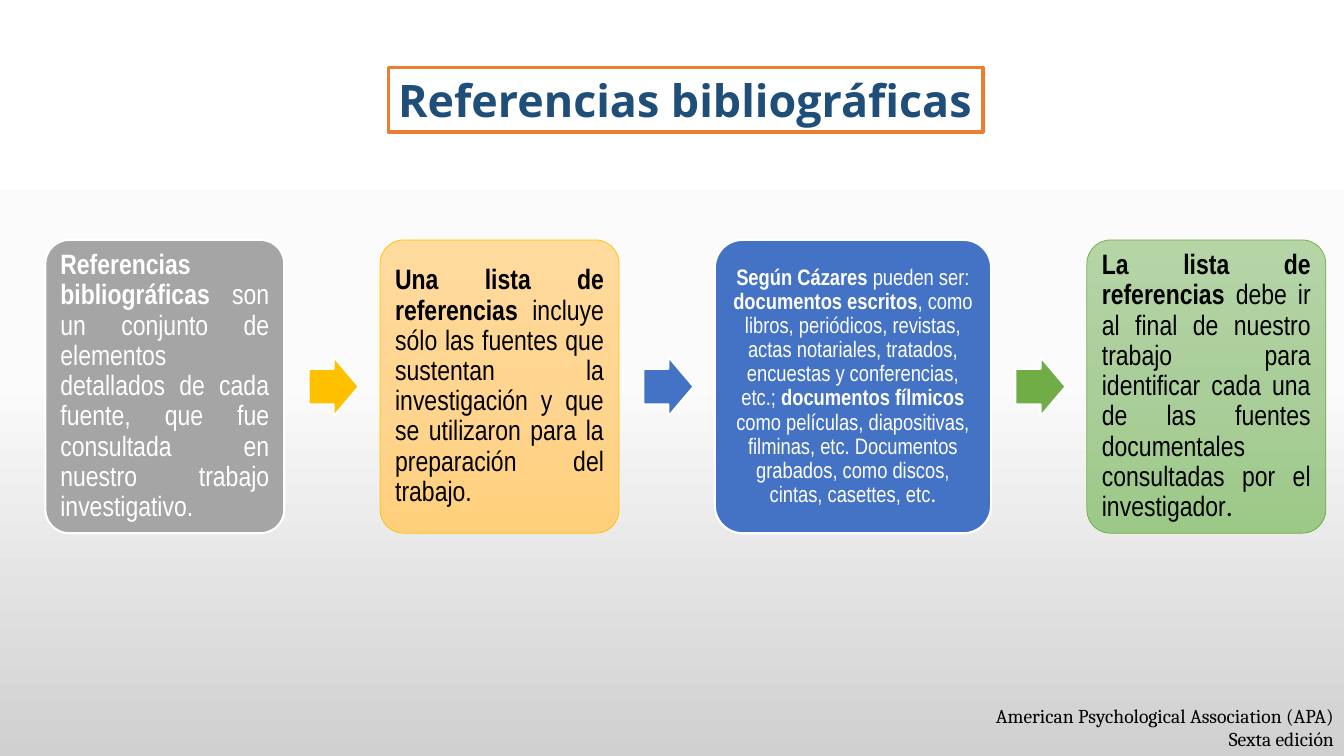
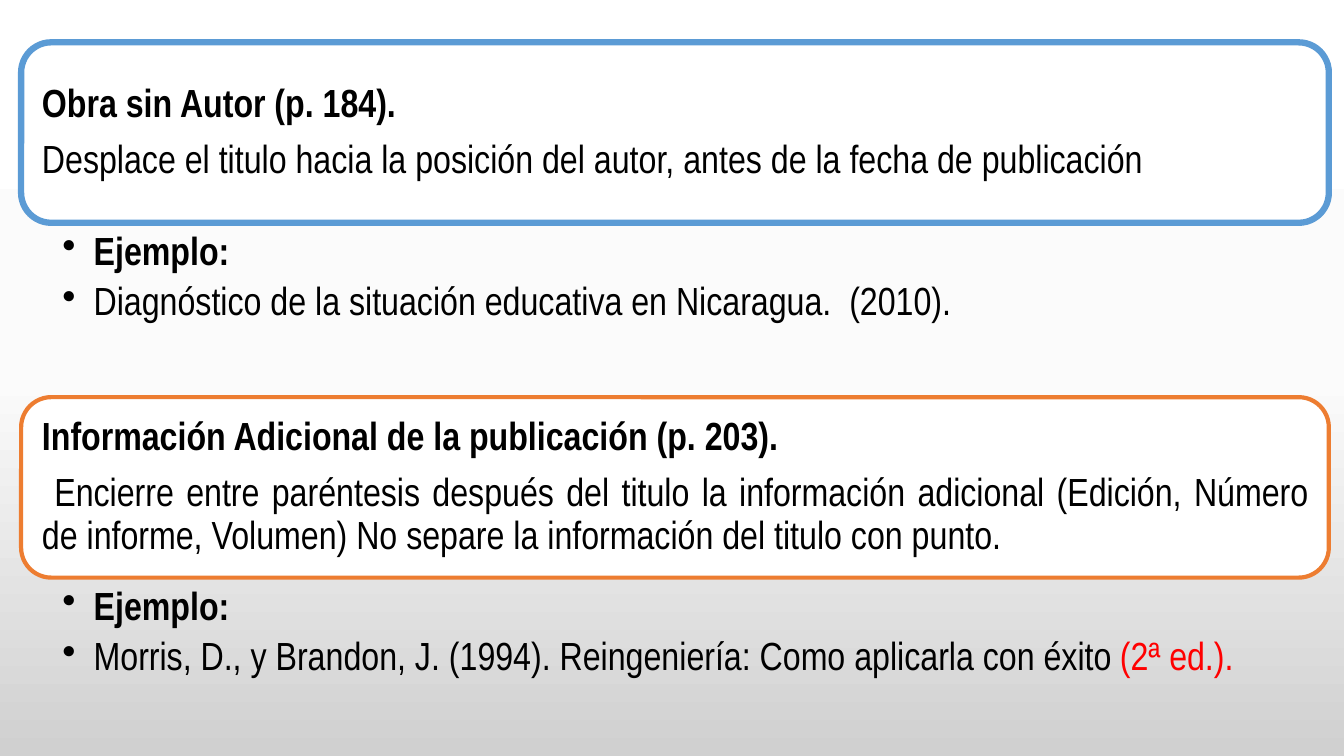
from copy import deepcopy

from pptx import Presentation
from pptx.dml.color import RGBColor
from pptx.enum.shapes import MSO_SHAPE
from pptx.enum.text import MSO_ANCHOR, MSO_AUTO_SIZE, PP_ALIGN
from pptx.oxml import parse_xml
from pptx.oxml.ns import nsdecls, qn
from pptx.util import Inches, Pt

WHITE = RGBColor(0xFF, 0xFF, 0xFF)
BLACK = RGBColor(0x00, 0x00, 0x00)
RED = RGBColor(0xFF, 0x00, 0x00)
GRAY = RGBColor(0xA5, 0xA5, 0xA5)
GOLD = RGBColor(0xFF, 0xC0, 0x00)
BLUE = RGBColor(0x44, 0x72, 0xC4)
SKY = RGBColor(0x5B, 0x9B, 0xD5)
GREEN = RGBColor(0x70, 0xAD, 0x47)
ORANGE = RGBColor(0xED, 0x7D, 0x31)
NAVY = RGBColor(0x1F, 0x4E, 0x79)
BACKGROUND = (WHITE, RGBColor(0xFB, 0xFB, 0xFB), RGBColor(0xD0, 0xD0, 0xD0))
SOFT_GOLD = (RGBColor(0xFF, 0xDB, 0x9E), RGBColor(0xFF, 0xD5, 0x90), RGBColor(0xFF, 0xD0, 0x7C))
SOFT_GREEN = (RGBColor(0xB5, 0xD5, 0xA7), RGBColor(0xAA, 0xCE, 0x9A), RGBColor(0x9C, 0xC9, 0x87))

BODY_FONT = "Arial Narrow"
BOLD = {"bold": True}
CALIBRI = {"font": "Calibri"}


def set_gradient(owner, fill, colors):
    """Fill from top to bottom with three evenly spaced colours."""
    fill.gradient()
    fill.gradient_angle = 270
    stop_list = owner.element.find(".//" + qn("a:gsLst"))
    stop_list.insert(1, deepcopy(stop_list[0]))
    for index, (stop, color) in enumerate(zip(fill.gradient_stops, colors)):
        stop.color.rgb = color
        stop.position = index / (len(colors) - 1)


def write_text(frame, paragraphs, *, size, font=BODY_FONT, color=BLACK, bold=False,
               align=PP_ALIGN.LEFT, line_spacing=0.9, after=0.35, anchor=MSO_ANCHOR.TOP,
               margins=(0.1, 0.05, 0.1, 0.05), wrap=True, grow=False, bullet_indent=None):
    """Write paragraphs made of (text, overrides) runs; after is a share of size."""
    frame.word_wrap = wrap
    frame.auto_size = MSO_AUTO_SIZE.SHAPE_TO_FIT_TEXT if grow else MSO_AUTO_SIZE.NONE
    frame.vertical_anchor = anchor
    (frame.margin_left, frame.margin_top,
     frame.margin_right, frame.margin_bottom) = map(Inches, margins)
    for index, runs in enumerate(paragraphs):
        paragraph = frame.add_paragraph() if index else frame.paragraphs[0]
        paragraph.alignment = align
        paragraph.line_spacing = line_spacing
        paragraph.space_after = Pt(after * size)
        if bullet_indent:
            add_bullet(paragraph, bullet_indent)
        for text, overrides in runs:
            run = paragraph.add_run()
            run.text = text
            run.font.size = Pt(size)
            run.font.name = overrides.get("font", font)
            run.font.bold = overrides.get("bold", bold)
            run.font.color.rgb = overrides.get("color", color)


def add_bullet(paragraph, indent):
    paragraph.level = 1
    properties = paragraph._p.get_or_add_pPr()
    properties.set("marL", str(Inches(indent)))
    properties.set("indent", str(-Inches(indent)))
    properties.append(parse_xml(f'<a:buChar {nsdecls("a")} char="•"/>'))


class Deck:
    def __init__(self):
        self.presentation = Presentation()
        self.presentation.slide_width = Inches(13.33)
        self.presentation.slide_height = Inches(7.5)
        self.slide = None

    def new_slide(self):
        self.slide = self.presentation.slides.add_slide(self.presentation.slide_layouts[6])
        set_gradient(self.slide, self.slide.background.fill, BACKGROUND)

    def shape(self, kind, box, fill, line, line_width, adjustments=()):
        shape = self.slide.shapes.add_shape(kind, *map(Inches, box))
        shape.shadow.inherit = False
        for index, value in enumerate(adjustments):
            shape.adjustments[index] = value
        if isinstance(fill, RGBColor):
            shape.fill.solid()
            shape.fill.fore_color.rgb = fill
        else:
            set_gradient(shape, shape.fill, fill)
        shape.line.color.rgb = line
        shape.line.width = Pt(line_width)
        return shape

    def text(self, box, paragraphs, **text_format):
        text_box = self.slide.shapes.add_textbox(*map(Inches, box))
        write_text(text_box.text_frame, paragraphs, **text_format)

    def title(self, text):
        shape = self.shape(MSO_SHAPE.RECTANGLE, (3.85, 0.67, 5.9, 0.64), WHITE, ORANGE, 2.25)
        write_text(shape.text_frame, [[(text, BOLD)]], size=32, font="Open Sans", color=NAVY,
                   line_spacing=1.0, after=0, wrap=False, grow=True)

    def footer(self, *lines):
        self.text((8.95, 6.93, 4.38, 0.57), [[(line, {})] for line in lines], size=14,
                  font="Cambria", align=PP_ALIGN.RIGHT, line_spacing=1.0, after=0, grow=True)

    def card(self, left, width, runs, fill, line, line_width, margin=0.08, **text_format):
        shape = self.shape(MSO_SHAPE.ROUNDED_RECTANGLE, (left, 2.38, width, 2.91),
                           fill, line, line_width, (0.1,))
        write_text(shape.text_frame, [runs], anchor=MSO_ANCHOR.MIDDLE,
                   margins=(margin,) * 4, **text_format)

    def arrow(self, left, color):
        self.shape(MSO_SHAPE.RIGHT_ARROW, (left, 3.54, 0.5, 0.59), color, WHITE, 1.5, (0.6, 0.5))

    def rule(self, top, heading, explanation, example, line, line_width, align):
        """A framed citation rule with its bulleted example below."""
        left, width, height = 0.21, 12.97, 1.79
        frame = self.shape(MSO_SHAPE.ROUNDED_RECTANGLE, (left, top, width, height),
                           WHITE, line, line_width)
        write_text(frame.text_frame, [[(heading, BOLD)], [(explanation, {})]], size=28,
                   align=align, anchor=MSO_ANCHOR.MIDDLE, margins=(0.12,) * 4)
        self.text((left, top + height + 0.05, width, 1.18), [[("Ejemplo:", BOLD)], example],
                  size=28, align=PP_ALIGN.JUSTIFY, after=0.2,
                  margins=(0.41, 0.04, 0.22, 0.04), bullet_indent=0.31)


def build_references(deck):
    deck.new_slide()
    justified = {"size": 20, "align": PP_ALIGN.JUSTIFY}
    cards = [
        (2.37, None, [
            ("Referencias bibliográficas ", BOLD),
            ("son un conjunto de elementos detallados de cada fuente, que fue consultada "
             "en nuestro trabajo investigativo.", {}),
        ], dict(justified, fill=GRAY, line=WHITE, line_width=1.5, color=WHITE)),
        (2.37, GOLD, [
            ("Una lista de referencias ", BOLD),
            ("incluye sólo las fuentes que sustentan la investigación y que se utilizaron "
             "para la preparación del trabajo.", {}),
        ], dict(justified, fill=SOFT_GOLD, line=GOLD, line_width=0.5)),
        (2.74, BLUE, [
            ("Según Cázares", BOLD),
            (" pueden ser: ", {}),
            ("documentos escritos", BOLD),
            (", como libros, periódicos, revistas, actas notariales, tratados, encuestas "
             "y conferencias, etc.; ", {}),
            ("documentos fílmicos ", BOLD),
            ("como películas, diapositivas, filminas, etc. Documentos grabados, como "
             "discos, cintas, casettes, etc", {}),
            (".", CALIBRI),
        ], dict(size=16, align=PP_ALIGN.CENTER, margin=0.07, fill=BLUE, line=WHITE,
                line_width=1.5, color=WHITE)),
        (2.37, GREEN, [
            ("La lista de referencias ", BOLD),
            ("debe ir al final de nuestro trabajo para identificar cada una de las fuentes "
             "documentales consultadas por el investigador", {}),
            (".", CALIBRI),
        ], dict(justified, fill=SOFT_GREEN, line=GREEN, line_width=0.5)),
    ]
    left, gap = 0.45, 0.95
    for width, arrow_color, runs, style in cards:
        if arrow_color is not None:
            deck.arrow(left - 0.71, arrow_color)
        deck.card(left, width, runs, **style)
        left += width + gap
    deck.footer("American Psychological Association (APA)", "Sexta edición")
    deck.title("Referencias bibliográficas")


def build_citation_rules(deck):
    deck.new_slide()
    deck.rule(0.42, "Obra sin Autor (p. 184).",
              "Desplace el titulo hacia la posición del autor, antes de la fecha de publicación",
              [("Diagnóstico de la situación educativa en Nicaragua.  (2010).", {})],
              SKY, 4.5, PP_ALIGN.LEFT)
    deck.rule(3.94, "Información Adicional de la publicación (p. 203).",
              " Encierre entre paréntesis después del titulo la información adicional (Edición, "
              "Número de informe, Volumen) No separe la información del titulo con punto.",
              [("Morris, D., y Brandon, J. (1994). Reingeniería: Como aplicarla con éxito ", {}),
               ("(2ª ed.).", {"color": RED})],
              ORANGE, 3, PP_ALIGN.JUSTIFY)


def main():
    deck = Deck()
    build_references(deck)
    build_citation_rules(deck)
    deck.presentation.save("out.pptx")


if __name__ == "__main__":
    main()
